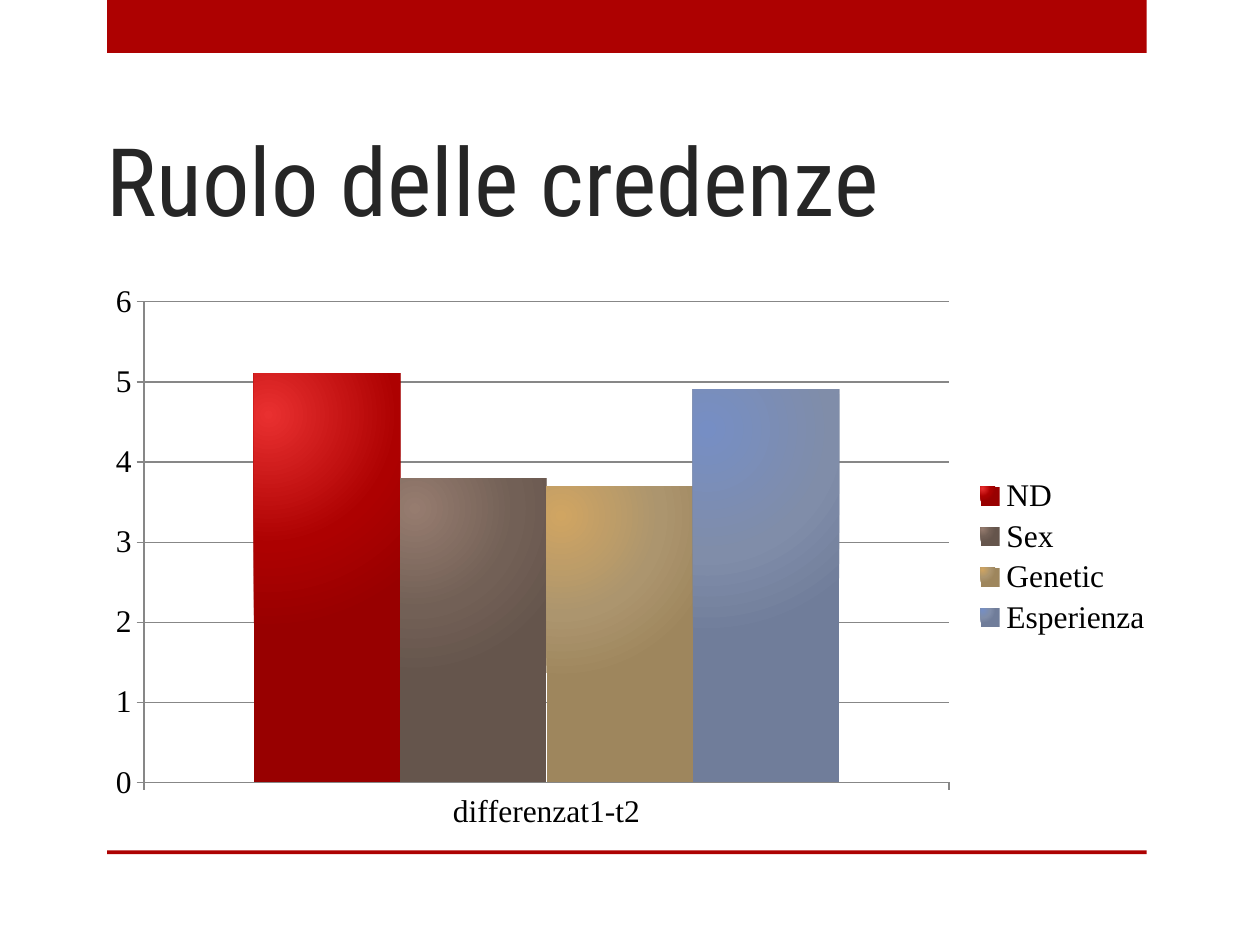
from dataclasses import dataclass

from pptx import Presentation
from pptx.chart.data import CategoryChartData
from pptx.dml.color import RGBColor
from pptx.enum.chart import XL_CHART_TYPE, XL_LEGEND_POSITION, XL_TICK_MARK
from pptx.enum.shapes import MSO_SHAPE
from pptx.enum.text import MSO_ANCHOR, PP_ALIGN
from pptx.oxml import parse_xml
from pptx.oxml.ns import nsdecls
from pptx.util import Pt

EMU_PER_PX = 9144


@dataclass(frozen=True)
class Theme:
    """Colours, fonts and type sizes of the slide."""

    accent: str = "AD0101"
    title: str = "262626"
    chart_text: str = "000000"
    grid: str = "878787"
    title_font: str = "Roboto Condensed"
    chart_font: str = "Times New Roman"
    title_size: int = 54
    chart_size: int = 18


THEME = Theme()

BELIEFS = [
    ("ND", 5.1, ("E93030", "AD0101", "980000")),
    ("Sex", 3.8, ("967C6F", "726056", "65554C")),
    ("Genetic", 3.7, ("D0A562", "AC956E", "9E865D")),
    ("Esperienza", 4.9, ("768EC4", "808DA9", "707D9A")),
]


def emu(*lengths):
    """Turn px lengths into EMU."""
    return [length * EMU_PER_PX for length in lengths]


def color(value):
    """Return the colour of a hex string."""
    return RGBColor.from_string(value)


def style_font(font, name, size, hex_color):
    """Set the face, size and colour of a font."""
    font.name = name
    font.size = Pt(size)
    font.color.rgb = color(hex_color)


def add_text(slide, box, text, *, font, size, hex_color,
             anchor=MSO_ANCHOR.TOP, align=PP_ALIGN.LEFT):
    """Add a wrapping text box with one paragraph."""
    frame = slide.shapes.add_textbox(*emu(*box)).text_frame
    frame.word_wrap = True
    frame.vertical_anchor = anchor
    paragraph = frame.paragraphs[0]
    paragraph.alignment = align
    run = paragraph.add_run()
    run.text = text
    style_font(run.font, font, size, hex_color)


def add_bar(slide, box):
    """Add a plain accent bar."""
    shape = slide.shapes.add_shape(MSO_SHAPE.RECTANGLE, *emu(*box))
    shape.shadow.inherit = False
    shape.fill.solid()
    shape.fill.fore_color.rgb = color(THEME.accent)
    shape.line.fill.background()


def add_frame(slide, box):
    """Add the thick top bar and the thin bottom rule of the box."""
    left, top, width, height = box
    rule = 3
    add_bar(slide, (left, top, width, 42))
    add_bar(slide, (left, top + height - rule, width, rule))


def fill_radial(series, shades):
    """Fill a series with a glow from its top left corner."""
    series.format.fill.solid()
    properties = series.format.fill._xPr
    stops = "".join(
        f'<a:gs pos="{position}"><a:srgbClr val="{shade}"/></a:gs>'
        for position, shade in zip((0, 60000, 100000), shades)
    )
    gradient = parse_xml(
        f'<a:gradFill {nsdecls("a")} rotWithShape="1"><a:gsLst>{stops}</a:gsLst>'
        '<a:path path="circle"><a:fillToRect l="10000" t="10000" r="90000" b="90000"/>'
        '</a:path></a:gradFill>'
    )
    properties.replace(properties[0], gradient)


def style_line(line):
    """Draw a chart line in the grid colour."""
    line.color.rgb = color(THEME.grid)
    line.width = Pt(0.75)


def add_belief_chart(slide, box):
    """Add the clustered columns with their legend."""
    data = CategoryChartData()
    data.categories = ["differenzat1-t2"]
    for name, value, _ in BELIEFS:
        data.add_series(name, [value])
    chart = slide.shapes.add_chart(XL_CHART_TYPE.COLUMN_CLUSTERED, *emu(*box), data).chart
    style_font(chart.font, THEME.chart_font, THEME.chart_size, THEME.chart_text)
    chart.has_title = False
    chart.has_legend = True
    chart.legend.position = XL_LEGEND_POSITION.RIGHT
    chart.legend.include_in_layout = False

    plot = chart.plots[0]
    plot.gap_width = 150
    plot.vary_by_categories = False
    for series, (_, _, shades) in zip(plot.series, BELIEFS):
        fill_radial(series, shades)

    for axis in (chart.category_axis, chart.value_axis):
        axis.major_tick_mark = XL_TICK_MARK.OUTSIDE
        axis.minor_tick_mark = XL_TICK_MARK.NONE
        style_line(axis.format.line)
    value_axis = chart.value_axis
    value_axis.minimum_scale = 0
    value_axis.maximum_scale = 6
    value_axis.major_unit = 1
    value_axis.has_major_gridlines = True
    style_line(value_axis.major_gridlines.format.line)


def main():
    """Build and save the slide."""
    presentation = Presentation()
    presentation.slide_width, presentation.slide_height = emu(1000, 750)
    slide = presentation.slides.add_slide(presentation.slide_layouts[6])
    add_frame(slide, (85, 0, 825, 678))
    add_text(slide, (75, 67, 850, 125), "Ruolo delle credenze",
             font=THEME.title_font, size=THEME.title_size,
             hex_color=THEME.title, anchor=MSO_ANCHOR.BOTTOM)
    add_belief_chart(slide, (75, 217, 850, 450))
    presentation.save("out.pptx")


if __name__ == "__main__":
    main()
